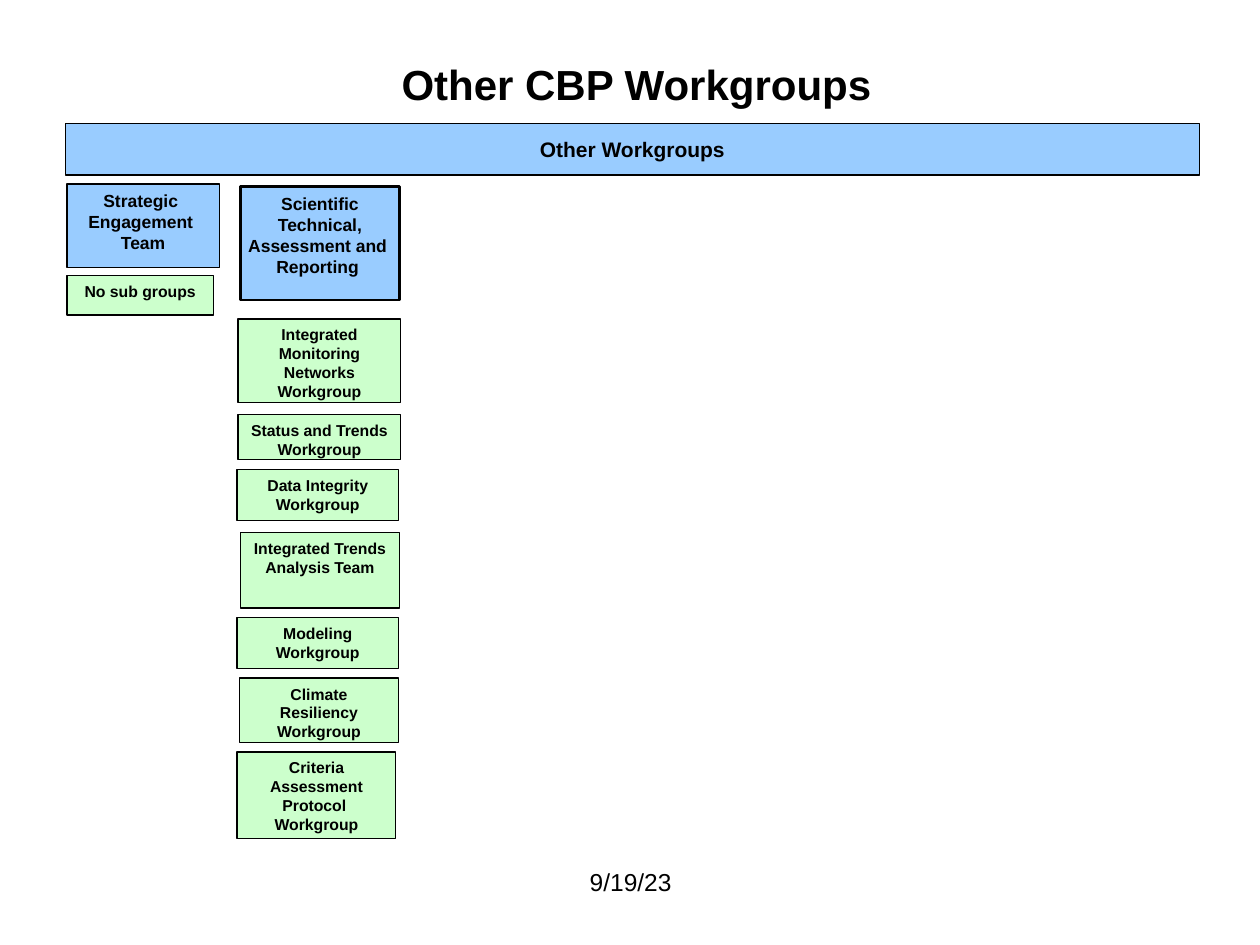
from pptx import Presentation
from pptx.dml.color import RGBColor
from pptx.enum.shapes import MSO_SHAPE
from pptx.enum.text import MSO_ANCHOR, MSO_AUTO_SIZE, PP_ALIGN
from pptx.util import Cm, Pt

theme = {
    "font": "Arial",
    "ink": RGBColor(0, 0, 0),
    "blue": RGBColor(0x99, 0xCC, 0xFF),
    "green": RGBColor(0xCC, 0xFF, 0xCC),
    "title": Pt(24), "bar": Pt(12), "head": Pt(10), "group": Pt(9), "date": Pt(14),
}


def write(shape, lines, size, bold=True, **frame):
    """Fill a shape with centred lines of text."""
    text = shape.text_frame
    form = {"word_wrap": True, "auto_size": MSO_AUTO_SIZE.NONE,
            "vertical_anchor": MSO_ANCHOR.TOP, **frame}
    for name, value in form.items():
        setattr(text, name, value)
    text.text = "\n".join(lines)
    for par in text.paragraphs:
        par.alignment = PP_ALIGN.CENTER
        font = par.runs[0].font
        look = {"name": theme["font"], "size": theme[size], "bold": bold}
        for name, value in look.items():
            setattr(font, name, value)
        font.color.rgb = theme["ink"]


def box(kind, place, fill, lines, size, line=0.75, **frame):
    """Draw a filled, outlined box with text."""
    shape = slide.shapes.add_shape(kind, *map(Cm, place))
    shape.shadow.inherit = False
    shape.fill.solid()
    shape.fill.fore_color.rgb = theme[fill]
    shape.line.color.rgb = theme["ink"]
    shape.line.width = Pt(line)
    write(shape, lines, size, **frame)


deck = Presentation()
deck.slide_width, deck.slide_height = Cm(25.4), Cm(19.05)
slide = deck.slides.add_slide(deck.slide_layouts[5])

# Title
title = slide.shapes.title
place = {"left": 1.4, "top": 0.56, "width": 22.86, "height": 2.24}
for name, value in place.items():
    setattr(title, name, Cm(value))
write(title, ["Other CBP Workgroups"], "title", vertical_anchor=MSO_ANCHOR.MIDDLE)

# Top bar and team heads
box(MSO_SHAPE.FLOWCHART_PROCESS, (1.32, 2.49, 22.86, 1.04), "blue",
    ["Other Workgroups"], "bar", word_wrap=False, vertical_anchor=MSO_ANCHOR.MIDDLE)
box(MSO_SHAPE.RECTANGLE, (1.35, 3.71, 3.07, 1.68), "blue",
    ["Strategic ", "Engagement ", "Team"], "head", word_wrap=False, margin_bottom=0)
box(MSO_SHAPE.RECTANGLE, (4.85, 3.76, 3.2, 2.29), "blue",
    ["Scientific", " Technical, ", "Assessment and ", "Reporting "], "head",
    line=1.5, word_wrap=False)

# Subgroups: left, top, width, height, lines
groups = [
    (1.35, 5.56, 2.95, 0.79, ["No sub groups"]),
    (4.8, 6.43, 3.28, 1.68, ["Integrated Monitoring Networks Workgroup"]),
    (4.8, 8.36, 3.28, 0.91, ["Status and Trends ", "Workgroup"]),
    (4.78, 9.47, 3.25, 1.02, ["Data Integrity Workgroup"]),
    (4.85, 10.74, 3.2, 1.52, ["Integrated Trends Analysis Team"]),
    (4.78, 12.45, 3.25, 1.02, ["Modeling Workgroup"]),
    (4.83, 13.67, 3.2, 1.3, ["Climate Resiliency Workgroup"]),
    (4.78, 15.16, 3.2, 1.75, ["Criteria Assessment Protocol  Workgroup"]),
]
for *place, lines in groups:
    box(MSO_SHAPE.FLOWCHART_PROCESS, place, "green", lines, "group")

# Date
date = slide.shapes.add_textbox(Cm(8.69), Cm(17.35), Cm(8.05), Cm(1.32))
write(date, ["9/19/23"], "date", bold=False)

deck.save("out.pptx")
